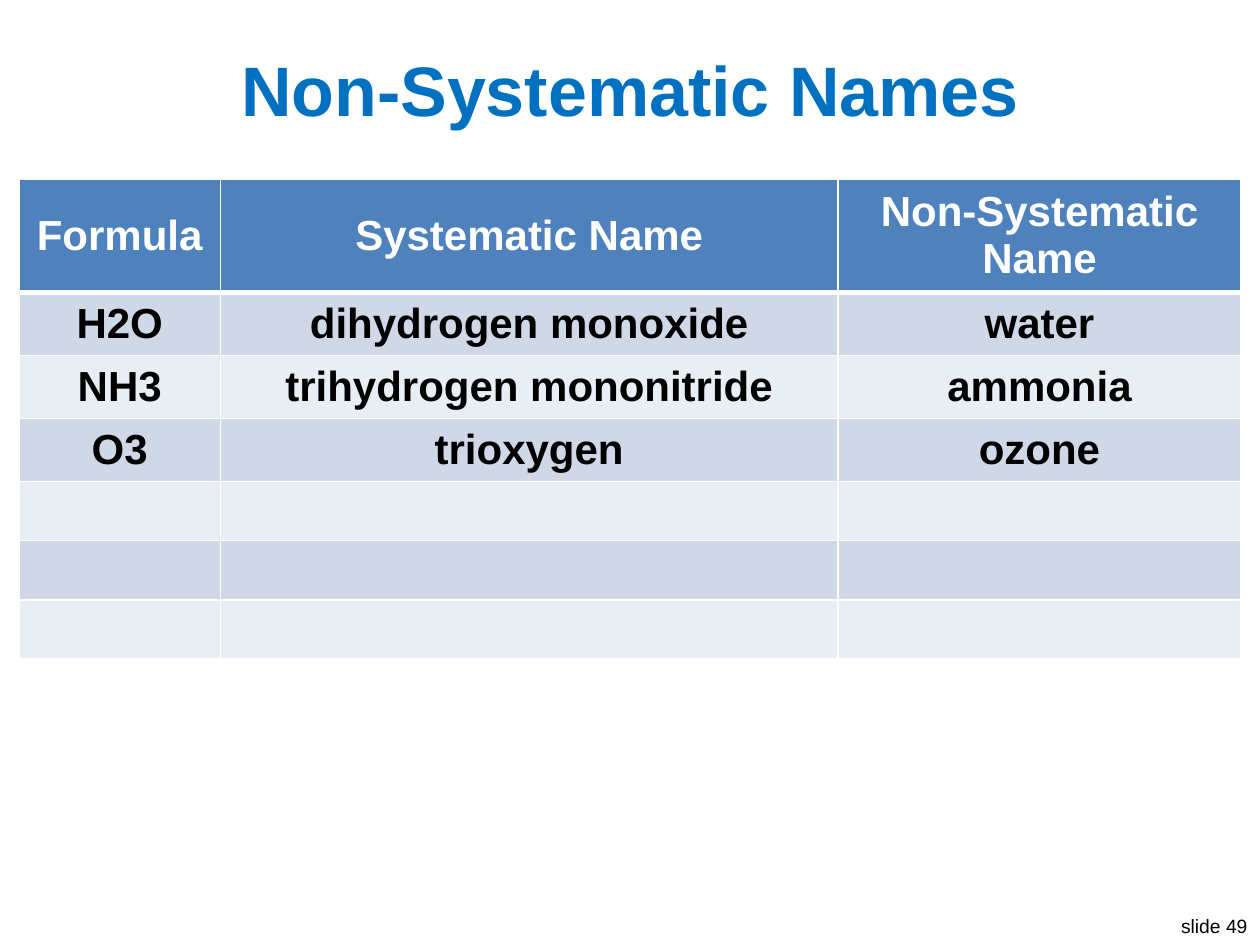
from dataclasses import dataclass

from lxml.etree import SubElement
from pptx import Presentation
from pptx.dml.color import RGBColor
from pptx.enum.text import MSO_ANCHOR as Anchor, PP_ALIGN as Align
from pptx.oxml.ns import qn
from pptx.util import Inches, Pt


@dataclass(frozen=True)
class Theme:
    font: str = "Arial"
    title: str = "0070C0"
    ink: str = "000000"
    white: str = "FFFFFF"
    header: str = "4F81BD"
    bands: tuple = ("D0D8E8", "E9EDF4")
    title_size: int = 40
    table_size: int = 24
    number_size: int = 11
    border: int = 1
    header_border: int = 3


THEME = Theme()
COLUMN_WIDTHS = (1.6, 4.9, 3.2)
HEADER_HEIGHT, ROW_HEIGHT = 0.84, 0.47
ROWS = (
    ("Formula", "Systematic Name", "Non-Systematic Name"),
    ("H2O", "dihydrogen monoxide", "water"),
    ("NH3", "trihydrogen mononitride", "ammonia"),
    ("O3", "trioxygen", "ozone"),
) + (("", "", ""),) * 3


def write(frame, text, size, color, align, bold=True):
    paragraph = frame.paragraphs[0]
    paragraph.alignment = align
    run = paragraph.add_run()
    run.text = text
    formats = {"name": THEME.font, "size": Pt(size), "bold": bold}
    for name, value in formats.items():
        setattr(run.font, name, value)
    run.font.color.rgb = RGBColor.from_string(color)


def add_text(slide, box, text, size, color, align, bold, wrap, anchor):
    frame = slide.shapes.add_textbox(*map(Inches, box)).text_frame
    frame.word_wrap = wrap
    frame.vertical_anchor = anchor
    write(frame, text, size, color, align, bold)


def set_borders(cell, top, bottom):
    properties = cell._tc.get_or_add_tcPr()
    widths = {"L": THEME.border, "R": THEME.border, "T": top, "B": bottom}
    # Border lines come before the fill in the cell properties
    for position, (side, width) in enumerate(widths.items()):
        line = SubElement(properties, qn(f"a:ln{side}"), w=str(Pt(width)))
        fill = SubElement(line, qn("a:solidFill"))
        SubElement(fill, qn("a:srgbClr"), val=THEME.white)
        properties.insert(position, line)


def add_names_table(slide, left, top):
    heights = [HEADER_HEIGHT] + [ROW_HEIGHT] * (len(ROWS) - 1)
    size = (sum(COLUMN_WIDTHS), sum(heights))
    table = slide.shapes.add_table(
        len(ROWS), len(COLUMN_WIDTHS), *map(Inches, (left, top, *size))
    ).table
    for column, width in zip(table.columns, COLUMN_WIDTHS):
        column.width = Inches(width)
    for index, (row, height, texts) in enumerate(zip(table.rows, heights, ROWS)):
        row.height = Inches(height)
        is_header = index == 0
        fill = THEME.header if is_header else THEME.bands[(index - 1) % 2]
        color = THEME.white if is_header else THEME.ink
        top_border = THEME.header_border if index == 1 else THEME.border
        bottom_border = THEME.header_border if is_header else THEME.border
        for cell, text in zip(row.cells, texts):
            cell.fill.solid()
            cell.fill.fore_color.rgb = RGBColor.from_string(fill)
            cell.vertical_anchor = Anchor.MIDDLE
            set_borders(cell, top_border, bottom_border)
            if text:
                write(cell.text_frame, text, THEME.table_size, color, Align.CENTER)


def main():
    presentation = Presentation()
    presentation.slide_width, presentation.slide_height = Inches(10), Inches(7.5)
    slide = presentation.slides.add_slide(presentation.slide_layouts[6])

    # Slide number
    add_text(slide, (9.25, 7.21, 0.75, 0.29), "slide 49", THEME.number_size,
             THEME.ink, Align.RIGHT, bold=False, wrap=False, anchor=Anchor.TOP)
    # Title
    add_text(slide, (0.2, 0.3, 9.6, 0.8), "Non-Systematic Names", THEME.title_size,
             THEME.title, Align.CENTER, bold=True, wrap=True, anchor=Anchor.MIDDLE)
    # Table of names
    add_names_table(slide, 0.15, 1.42)

    presentation.save("out.pptx")


if __name__ == "__main__":
    main()
